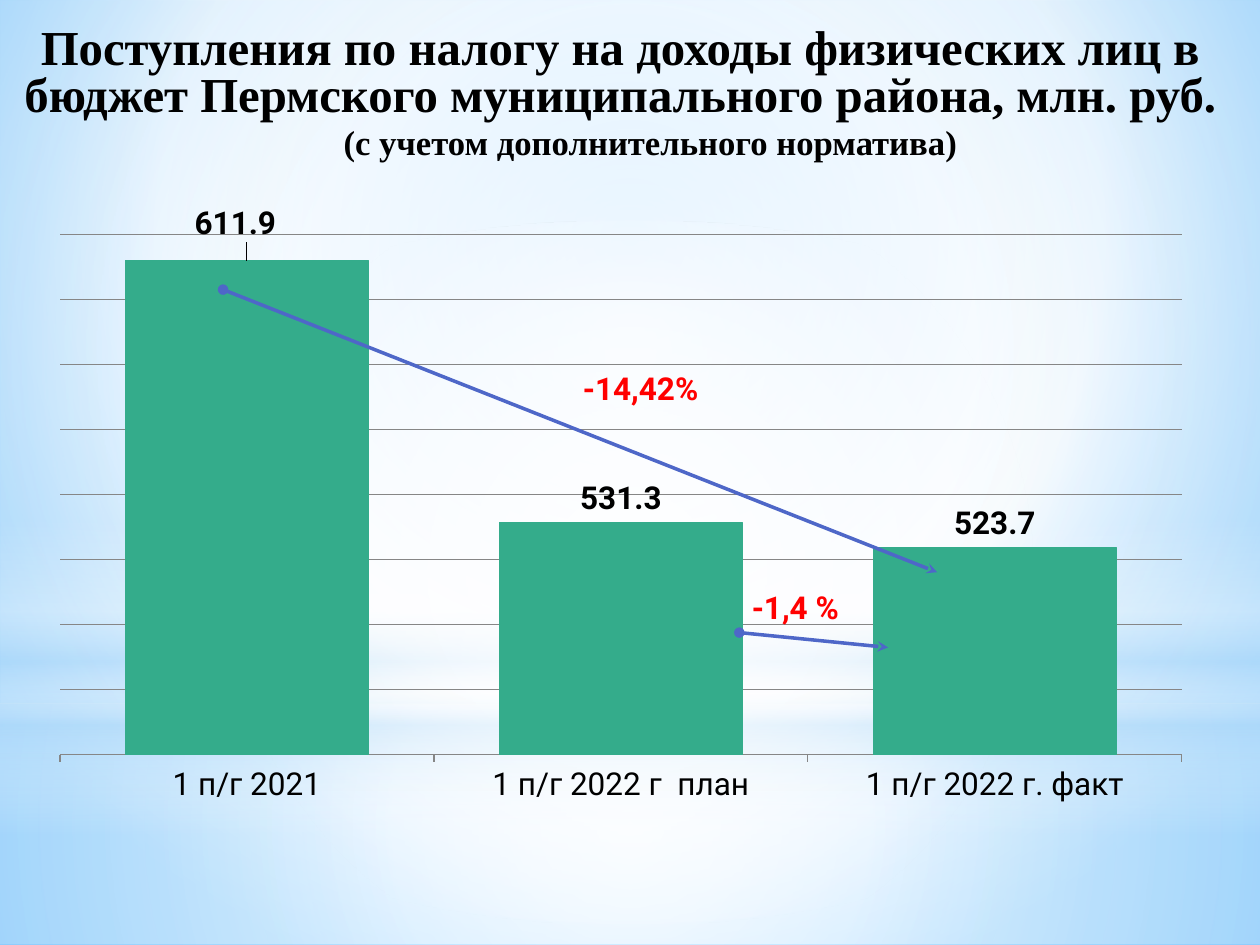
from lxml import etree
from pptx import Presentation
from pptx.chart.data import CategoryChartData
from pptx.dml.color import RGBColor
from pptx.enum.chart import XL_CHART_TYPE, XL_LABEL_POSITION, XL_TICK_MARK
from pptx.enum.shapes import MSO_CONNECTOR, MSO_SHAPE
from pptx.enum.text import MSO_ANCHOR, MSO_AUTO_SIZE, PP_ALIGN
from pptx.oxml import parse_xml
from pptx.oxml.ns import nsdecls, qn
from pptx.util import Pt

COLUMNS = XL_CHART_TYPE.COLUMN_CLUSTERED
OUTSIDE = XL_LABEL_POSITION.OUTSIDE_END
TICK_OUT, TICK_NONE = XL_TICK_MARK.OUTSIDE, XL_TICK_MARK.NONE
STRAIGHT = MSO_CONNECTOR.STRAIGHT
RECTANGLE, ELLIPSE = MSO_SHAPE.RECTANGLE, MSO_SHAPE.OVAL
MIDDLE, CENTER, LEFT = MSO_ANCHOR.MIDDLE, PP_ALIGN.CENTER, PP_ALIGN.LEFT
NO_FIT = MSO_AUTO_SIZE.NONE


def color(value):
    return RGBColor.from_string(value)


def gradient(stops, focus=None):
    fill = parse_xml(f'<a:gradFill {nsdecls("a")} rotWithShape="1"><a:gsLst/></a:gradFill>')
    for position, value, alpha in stops:
        stop = etree.SubElement(fill[0], qn("a:gs"), pos=str(position * 1000))
        tint = etree.SubElement(stop, qn("a:srgbClr"), val=value)
        if alpha < 100:
            etree.SubElement(tint, qn("a:alpha"), val=str(alpha * 1000))
    if focus:
        route = etree.SubElement(fill, qn("a:path"), path="circle")
        edges = {side: str(part * 1000) for side, part in zip("ltrb", focus)}
        etree.SubElement(route, qn("a:fillToRect"), **edges)
    else:
        etree.SubElement(fill, qn("a:lin"), ang="5400000", scaled="0")
    return fill


def replace_solid(holder, fill):
    solid = holder.find(qn("a:solidFill"))
    holder.replace(solid, fill)


def manual_layout(**values):
    layout = parse_xml(f'<c:layout {nsdecls("c")}><c:manualLayout/></c:layout>')
    for name, value in values.items():
        etree.SubElement(layout[0], qn(f"c:{name}"), val=str(value))
    return layout


def write(para, text, font, size, ink, bold=True, align=LEFT, spacing=1.0):
    para.alignment = align
    para.line_spacing = spacing
    span = para.add_run()
    span.text = text
    span.font.name = font
    span.font.size = Pt(size)
    span.font.bold = bold
    span.font.color.rgb = color(ink)


class Slide:
    heading_font, body_font = "Times New Roman", "Roboto"
    black, red, blue, green, gray = "000000", "FF0000", "4E67C8", "34AC8B", "868686"

    def __init__(self, deck):
        self.page = deck.slides.add_slide(deck.slide_layouts[5])

    def background(self, stops, focus):
        self.page.background.fill.solid()
        holder = self.page.element.find(".//" + qn("p:bgPr"))
        replace_solid(holder, gradient(stops, focus))

    def glow(self, kind, top, height, stops, focus=None):
        shape = self.page.shapes.add_shape(kind, 0, Pt(top), Pt(720), Pt(height))
        shape.shadow.inherit = False
        shape.line.fill.background()
        shape.fill.solid()
        replace_solid(shape.element.spPr, gradient(stops, focus))

    def title(self, heading, note):
        box = self.page.shapes.title
        box.left, box.top, box.width, box.height = 0, Pt(10), Pt(709), Pt(88.5)
        self.page.shapes.element.append(box.element)
        frame = box.text_frame
        frame.auto_size, frame.vertical_anchor = NO_FIT, MIDDLE
        write(frame.paragraphs[0], heading, self.heading_font, 27.9, self.black,
              align=CENTER, spacing=0.8)
        para = frame.add_paragraph()
        write(para, note, self.heading_font, 19.8, self.black, align=CENTER, spacing=0.8)
        para.space_before = Pt(4)
        para._p.get_or_add_pPr().set("marL", str(Pt(34)))

    def column_chart(self, categories, values):
        data = CategoryChartData(number_format="#,##0.0")
        data.categories = categories
        data.add_series("Series 1", values)
        chart = self.page.shapes.add_chart(
            COLUMNS, Pt(25), Pt(110), Pt(663), Pt(387), data).chart
        chart.has_legend = chart.has_title = False
        chart.font.name, chart.font.size = self.body_font, Pt(18)
        chart.font.color.rgb = color(self.black)
        self.format_axes(chart)
        plot = chart.plots[0]
        plot.gap_width, plot.vary_by_categories = 54, False
        series = plot.series[0]
        series.format.fill.solid()
        series.format.fill.fore_color.rgb = color(self.green)
        series.format.line.color.rgb = color(self.green)
        series.format.line.width = Pt(0.75)
        self.format_labels(series)
        area = chart._chartSpace.find(".//" + qn("c:plotArea"))
        for layout in area.findall(qn("c:layout")):
            area.remove(layout)
        area.insert(0, manual_layout(layoutTarget="inner", xMode="edge", yMode="edge",
                                     x=0.014, y=0.062, w=0.967, h=0.768))

    def format_axes(self, chart):
        scale = chart.value_axis
        scale.minimum_scale, scale.maximum_scale, scale.major_unit = 460, 620, 20
        scale.visible, scale.has_major_gridlines = False, True
        names = chart.category_axis
        names.major_tick_mark, names.minor_tick_mark = TICK_OUT, TICK_NONE
        for line in (scale.major_gridlines.format.line, names.format.line):
            line.color.rgb = color(self.gray)
            line.width = Pt(0.75)

    def format_labels(self, series):
        labels = series.data_labels
        labels.show_value, labels.position = True, OUTSIDE
        labels.number_format, labels.number_format_is_linked = "#,##0.0", False
        first = series.points[0].data_label
        for label in (labels, first):
            label.font.bold = True
            label.font.size = Pt(18)
            label.font.name = self.body_font
            label.font.color.rgb = color(self.black)
        first.position = OUTSIDE
        element = series._element.find(".//" + qn("c:dLbl"))
        element.insert(1, manual_layout(x=-0.01, y=-0.02))

    def arrow(self, start, end):
        line = self.page.shapes.add_connector(STRAIGHT, *map(Pt, start + end))
        line.line.color.rgb = color(self.blue)
        line.line.width = Pt(2)
        stroke = line.line._get_or_add_ln()
        etree.SubElement(stroke, qn("a:headEnd"), type="oval")
        etree.SubElement(stroke, qn("a:tailEnd"), type="stealth")
        etree.SubElement(line._element.spPr, qn("a:effectLst"))

    def change(self, text, left, top, width):
        box = self.page.shapes.add_textbox(Pt(left), Pt(top), Pt(width), Pt(29))
        box.text_frame.word_wrap = True
        write(box.text_frame.paragraphs[0], text, self.body_font, 18, self.red)


def main():
    deck = Presentation()
    deck.slide_width, deck.slide_height = Pt(720), Pt(540)
    slide = Slide(deck)
    white, sky, middle = "FFFFFF", "B4DCFA", (50, 50, 50, 50)
    slide.background([(0, "9ED5FF", 100), (60, white, 100), (100, "5BB9FF", 100)],
                     (20, 10, 20, 60))
    slide.glow(RECTANGLE, 402, 138, [(0, white, 91), (37, white, 76), (100, sky, 79)], middle)
    slide.glow(RECTANGLE, 0, 402, [(0, white, 89), (48, white, 62), (100, sky, 79)], middle)
    slide.glow(RECTANGLE, 297, 180, [(0, white, 0), (29, white, 30), (45, sky, 40),
                                     (55, white, 26), (65, sky, 60), (100, white, 0)])
    slide.glow(ELLIPSE, 126, 402, [(0, white, 100), (56, white, 0)], middle)
    slide.title("Поступления по налогу на доходы физических лиц в бюджет "
                "Пермского муниципального района, млн. руб.",
                "(с учетом дополнительного норматива)")
    slide.column_chart(["1 п/г 2021", "1 п/г 2022 г  план", "1 п/г 2022 г. факт"],
                       [611.9, 531.3, 523.7])
    slide.arrow((127.5, 165.5), (535.5, 327))
    slide.change("-14,42%", 326, 207.5, 96.5)
    slide.arrow((422.5, 361.5), (507.5, 370))
    slide.change("-1,4 %", 422.5, 332.5, 85)
    deck.save("out.pptx")


if __name__ == "__main__":
    main()
